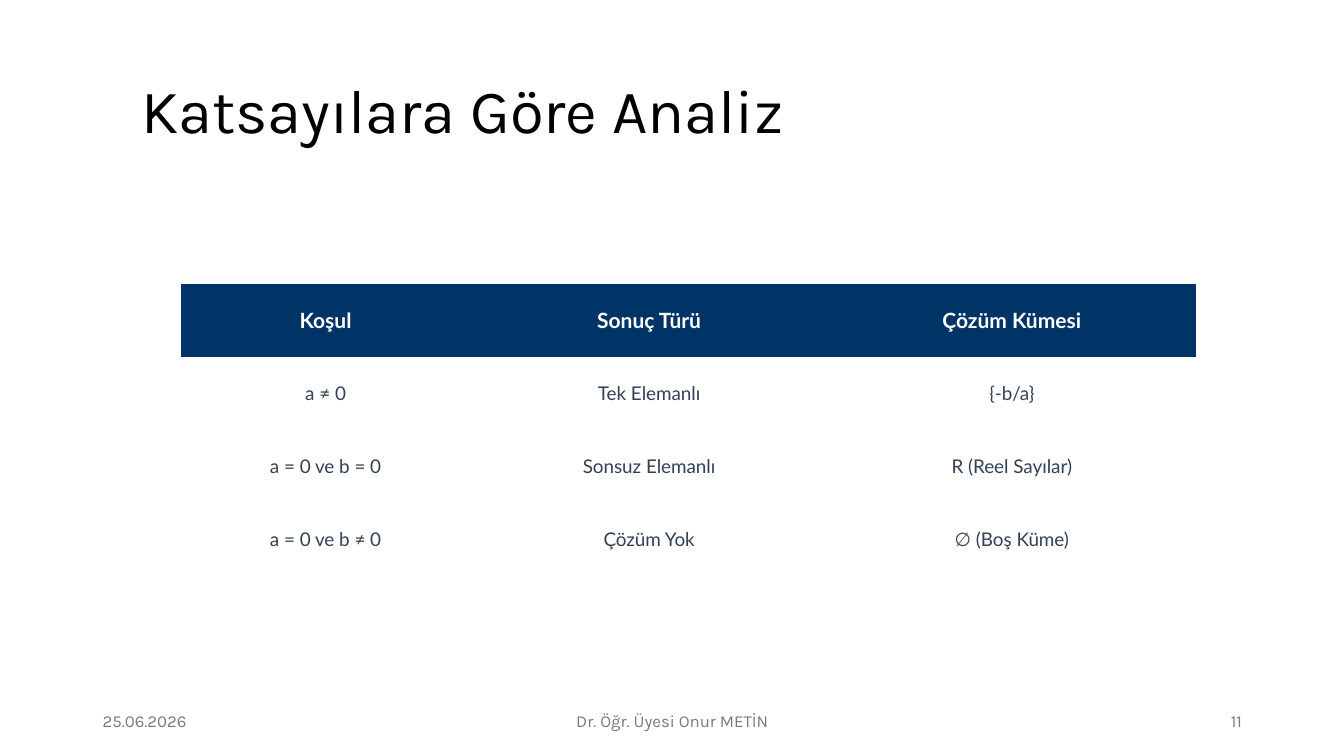
from dataclasses import dataclass

from pptx import Presentation
from pptx import util as u
from pptx.dml.color import RGBColor
from pptx.enum import text as t


@dataclass(frozen=True)
class Theme:
    black: str = "000000"
    grey: str = "797979"
    navy: str = "003366"
    white: str = "FFFFFF"
    slate: str = "334155"
    heading_font: str = "Karla"
    table_font: str = "Lato"
    title_size: float = 44
    footer_size: float = 12
    header_size: float = 15
    body_size: float = 13.5


theme = Theme()
title_format = dict(name=theme.heading_font, size=u.Pt(theme.title_size), bold=False)
footer_format = dict(name=theme.heading_font, size=u.Pt(theme.footer_size), bold=False)
header_format = dict(name=theme.table_font, size=u.Pt(theme.header_size), bold=True)
body_format = dict(name=theme.table_font, size=u.Pt(theme.body_size), bold=False)


def write(frame, words, font_format, color, alignment):
    frame.text = words
    frame.word_wrap = True
    frame.vertical_anchor = t.MSO_ANCHOR.MIDDLE
    paragraph = frame.paragraphs[0]
    paragraph.alignment = alignment
    font = paragraph.runs[0].font
    for attribute, value in font_format.items():
        setattr(font, attribute, value)
    font.color.rgb = RGBColor.from_string(color)
    return paragraph


# Slide
presentation = Presentation()
presentation.slide_width = u.Cm(33.87)
presentation.slide_height = u.Cm(19.05)
slide = presentation.slides.add_slide(presentation.slide_layouts[5])

# Title
title = slide.shapes.title
title.left, title.top, title.width, title.height = map(u.Cm, (3.3, 1.02, 28.24, 3.68))
paragraph = write(title.text_frame, "Katsayılara Göre Analiz", title_format,
                  theme.black, t.PP_ALIGN.LEFT)
paragraph.line_spacing = 0.9
title.text_frame.auto_size = t.MSO_AUTO_SIZE.NONE

# Footer: date, lecturer, slide number
footers = [
    ("25.06.2026", 2.34, 7.62, t.PP_ALIGN.LEFT),
    ("Dr. Öğr. Üyesi Onur METİN", 11.23, 11.43, t.PP_ALIGN.CENTER),
    ("11", 23.93, 7.62, t.PP_ALIGN.RIGHT),
]
for words, left, width, alignment in footers:
    box = slide.shapes.add_textbox(u.Cm(left), u.Cm(17.65), u.Cm(width), u.Cm(1.02))
    write(box.text_frame, words, footer_format, theme.grey, alignment)

# Table of conditions
rows = [
    ("Koşul", "Sonuç Türü", "Çözüm Kümesi"),
    ("a ≠ 0", "Tek Elemanlı", "{-b/a}"),
    ("a = 0 ve b = 0", "Sonsuz Elemanlı", "R (Reel Sayılar)"),
    ("a = 0 ve b ≠ 0", "Çözüm Yok", "∅ (Boş Küme)"),
]
column_widths = (7.29, 9.02, 9.26)
row_height = 1.84
table = slide.shapes.add_table(
    len(rows), len(column_widths), u.Cm(4.56), u.Cm(7.15),
    u.Cm(sum(column_widths)), u.Cm(row_height * len(rows))).table
table.horz_banding = False
# Built-in style without fills or grid lines
table._tbl.tblPr[0].text = "{2D5ABB26-0587-4C30-8999-92F81FD0307C}"
for column, width in zip(table.columns, column_widths):
    column.width = u.Cm(width)

cell_format = dict(
    margin_left=u.Cm(0.18), margin_right=u.Cm(0.18),
    margin_top=u.Cm(0.08), margin_bottom=u.Cm(0.08),
    vertical_anchor=t.MSO_ANCHOR.MIDDLE)
for row_index, row in enumerate(rows):
    table.rows[row_index].height = u.Cm(row_height)
    is_header = row_index == 0
    font_format = header_format if is_header else body_format
    color = theme.white if is_header else theme.slate
    for column_index, words in enumerate(row):
        cell = table.cell(row_index, column_index)
        write(cell.text_frame, words, font_format, color, t.PP_ALIGN.CENTER)
        for attribute, value in cell_format.items():
            setattr(cell, attribute, value)
        if is_header:
            cell.fill.solid()
            cell.fill.fore_color.rgb = RGBColor.from_string(theme.navy)
        else:
            cell.fill.background()

presentation.save("out.pptx")
